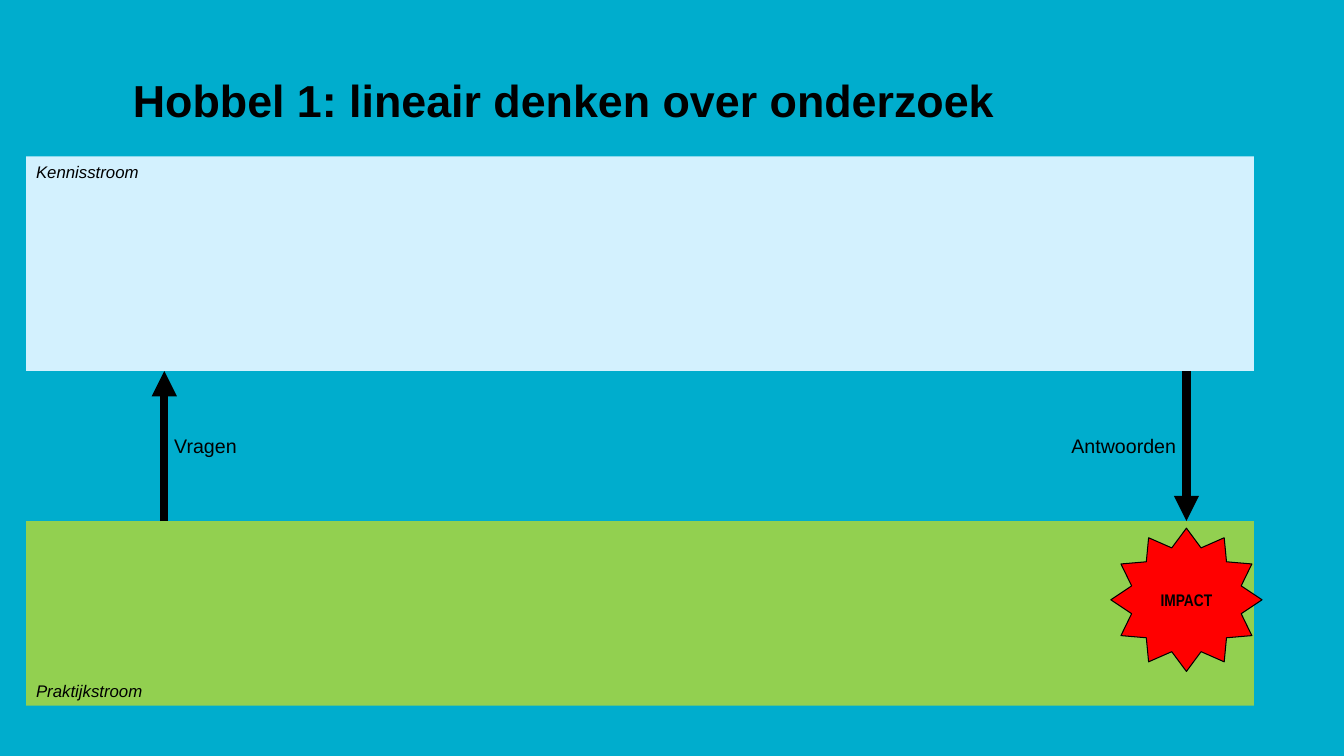
import pptx
import pptx.dml.color
import pptx.enum.shapes
import pptx.enum.text
import pptx.oxml
import pptx.oxml.ns
import pptx.util

Cm = pptx.util.Cm
Pt = pptx.util.Pt
RGBColor = pptx.dml.color.RGBColor
Shape = pptx.enum.shapes.MSO_SHAPE
Anchor = pptx.enum.text.MSO_ANCHOR
Align = pptx.enum.text.PP_ALIGN

BLACK = RGBColor(0x00, 0x00, 0x00)
TURQUOISE = RGBColor(0x00, 0xAD, 0xCD)
PALE_BLUE = RGBColor(0xD3, 0xF1, 0xFE)
GREEN = RGBColor(0x92, 0xD0, 0x50)
RED = RGBColor(0xFF, 0x00, 0x00)

# Shared layout, in centimetres
BAND_LEFT, BAND_WIDTH = 0.66, 30.94
KNOWLEDGE_TOP, KNOWLEDGE_HEIGHT = 3.94, 5.41
PRACTICE_TOP, PRACTICE_HEIGHT = 13.13, 4.65
KNOWLEDGE_BOTTOM = KNOWLEDGE_TOP + KNOWLEDGE_HEIGHT
QUESTION_X, ANSWER_X = 4.14, 29.9
LABEL_TOP, LABEL_HEIGHT = 10.8, 0.86
STAR_WIDTH, STAR_HEIGHT = 3.81, 3.61


def write_text(shape, text, size, font="Arial", bold=False, italic=False,
               align=Align.LEFT, anchor=Anchor.TOP, wrap=True):
    frame = shape.text_frame
    frame.word_wrap = wrap
    frame.vertical_anchor = anchor
    paragraph = frame.paragraphs[0]
    paragraph.alignment = align
    run = paragraph.add_run()
    run.text = text
    run.font.name = font
    run.font.size = Pt(size)
    run.font.bold = bold
    run.font.italic = italic
    run.font.color.rgb = BLACK


class SlideBuilder:
    def __init__(self, slide, background):
        self.slide = slide
        slide.background.fill.solid()
        slide.background.fill.fore_color.rgb = background

    def shape(self, kind, left, top, width, height, fill, text, outline=None, **style):
        shape = self.slide.shapes.add_shape(
            kind, Cm(left), Cm(top), Cm(width), Cm(height))
        shape.shadow.inherit = False
        shape.fill.solid()
        shape.fill.fore_color.rgb = fill
        if outline is None:
            shape.line.fill.background()
        else:
            shape.line.color.rgb = outline
            shape.line.width = Pt(0.75)
        write_text(shape, text, 12, **style)

    def band(self, top, height, fill, text, anchor):
        self.shape(Shape.RECTANGLE, BAND_LEFT, top, BAND_WIDTH, height, fill, text,
                   italic=True, anchor=anchor)

    def text(self, left, top, width, height, text, size, **style):
        box = self.slide.shapes.add_textbox(Cm(left), Cm(top), Cm(width), Cm(height))
        write_text(box, text, size, **style)

    def arrow(self, x, start, end):
        connector = self.slide.shapes.add_connector(
            pptx.enum.shapes.MSO_CONNECTOR.STRAIGHT, Cm(x), Cm(start), Cm(x), Cm(end))
        connector.line.color.rgb = BLACK
        connector.line.width = Pt(6)
        namespace = pptx.oxml.ns.nsdecls("a")
        connector.line._get_or_add_ln().append(
            pptx.oxml.parse_xml(f'<a:tailEnd {namespace} type="triangle"/>'))
        connector._element.spPr.append(
            pptx.oxml.parse_xml(f"<a:effectLst {namespace}/>"))


def main():
    presentation = pptx.Presentation()
    presentation.slide_width = Cm(33.87)
    presentation.slide_height = Cm(19.05)
    slide = presentation.slides.add_slide(presentation.slide_layouts[6])
    builder = SlideBuilder(slide, TURQUOISE)

    # Title and the two streams
    builder.band(PRACTICE_TOP, PRACTICE_HEIGHT, GREEN, "Praktijkstroom", Anchor.BOTTOM)
    builder.text(3.1, 1.68, 22.86, 1.63, "Hobbel 1: lineair denken over onderzoek", 32,
                 bold=True, anchor=Anchor.BOTTOM)
    builder.band(KNOWLEDGE_TOP, KNOWLEDGE_HEIGHT, PALE_BLUE, "Kennisstroom", Anchor.TOP)

    # Questions go up, answers come down
    builder.arrow(QUESTION_X, PRACTICE_TOP, KNOWLEDGE_BOTTOM)
    builder.arrow(ANSWER_X, KNOWLEDGE_BOTTOM, PRACTICE_TOP)
    builder.text(QUESTION_X, LABEL_TOP, 2.11, LABEL_HEIGHT, "Vragen", 14, wrap=False)
    builder.text(26.75, LABEL_TOP, 3.18, LABEL_HEIGHT, "Antwoorden", 14, wrap=False)

    # Impact star, centred under the answer arrow
    builder.shape(Shape.STAR_12_POINT, ANSWER_X - STAR_WIDTH / 2, 13.31,
                  STAR_WIDTH, STAR_HEIGHT, RED, "IMPACT", outline=BLACK,
                  font="Arial Narrow", bold=True, align=Align.CENTER,
                  anchor=Anchor.MIDDLE)

    presentation.save("out.pptx")


if __name__ == "__main__":
    main()
